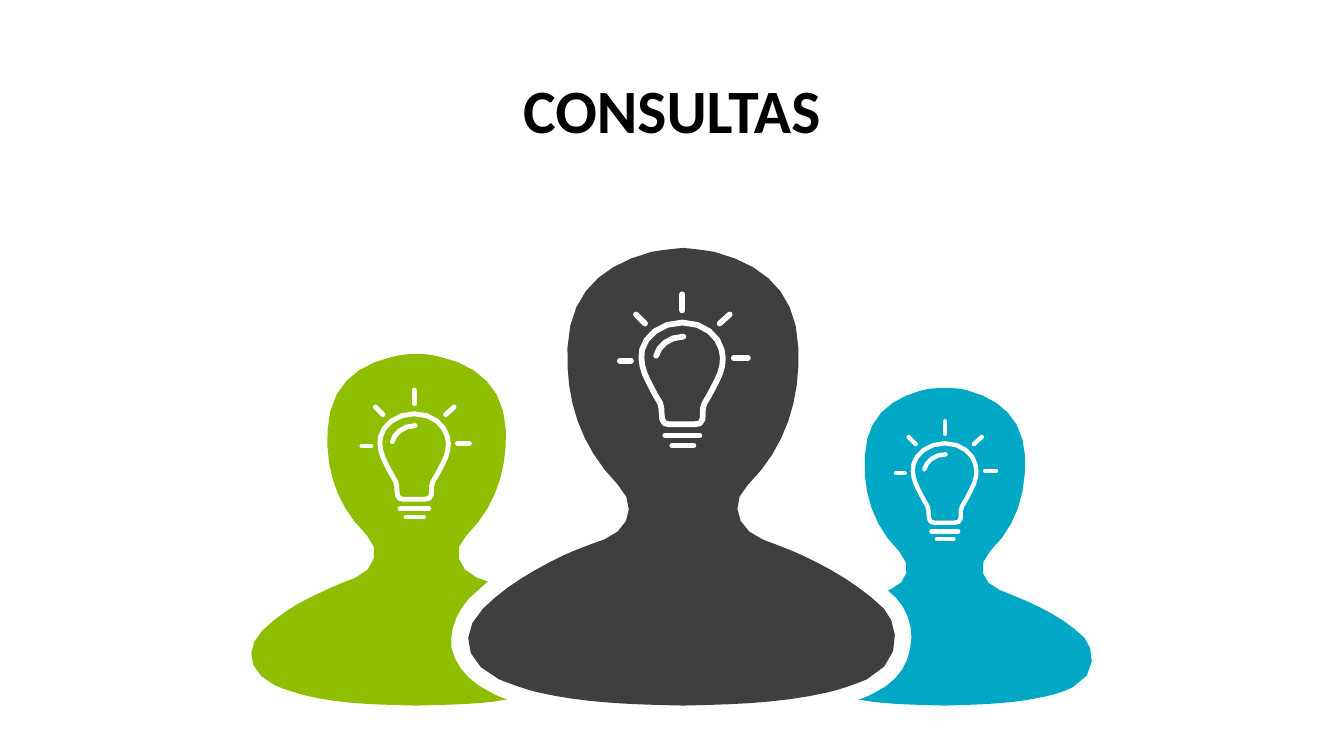
import math

from lxml import etree
from pptx import Presentation
from pptx import util as u
from pptx.dml.color import RGBColor
from pptx.enum import text
from pptx.oxml.ns import qn

COLORS = {"black": "000000", "white": "FFFFFF", "green": "8FBE00",
          "gray": "3F3F3F", "blue": "00A8C6"}
TITLE = "CONSULTAS"
GRID = 0.72        # points per drawing unit
FINE = 100         # freeform steps per point

# Outlines: a start point, then two handles and an end point per curve
GREEN_PERSON = [
    (448, 643), (446, 626), (452, 608), (466, 593),
    (472, 588), (478, 582), (484, 577), (481, 576), (477, 574), (473, 573),
    (454, 565), (448, 545), (463, 531), (492, 502), (503, 466), (502, 427),
    (500, 385), (475, 363), (437, 354), (429, 352), (421, 351), (413, 351),
    (406, 351), (397, 352), (389, 354), (351, 363), (327, 385), (325, 427),
    (323, 466), (334, 502), (364, 531), (378, 545), (372, 565), (353, 573),
    (343, 577), (332, 581), (322, 586), (299, 596), (278, 608), (260, 626),
    (244, 642), (244, 666), (273, 680), (282, 684), (293, 687), (303, 690),
    (336, 698), (370, 699), (413, 700), (447, 699), (476, 699), (503, 694),
    (498, 692), (492, 690), (487, 687), (466, 677), (452, 661), (448, 643)]
GRAY_PERSON = [
    (860, 674), (848, 679), (834, 684), (821, 687),
    (777, 697), (733, 699), (678, 700), (622, 699), (578, 697), (534, 687),
    (521, 684), (508, 679), (495, 674), (458, 656), (457, 626), (479, 604),
    (502, 581), (530, 565), (559, 551), (572, 545), (586, 540), (600, 535),
    (625, 525), (632, 500), (613, 481), (575, 442), (561, 396), (563, 345),
    (565, 291), (597, 263), (646, 250), (657, 248), (667, 247), (678, 246),
    (688, 247), (698, 248), (709, 250), (759, 263), (790, 291), (792, 345),
    (794, 396), (780, 443), (742, 481), (723, 499), (731, 525), (756, 535),
    (769, 540), (783, 545), (796, 551), (826, 565), (853, 581), (877, 604),
    (891, 619), (897, 656), (860, 674)]
BLUE_PERSON = [
    (1076, 633), (1060, 617), (1040, 606), (1020, 597),
    (1011, 593), (1001, 589), (991, 585), (974, 578), (969, 561), (982, 547),
    (1009, 521), (1018, 489), (1017, 453), (1015, 416), (993, 396), (959, 387),
    (952, 385), (944, 385), (937, 385), (930, 385), (923, 385), (915, 387),
    (881, 396), (859, 416), (858, 453), (856, 489), (866, 521), (892, 547),
    (905, 561), (901, 578), (883, 585), (882, 586), (882, 586), (881, 586),
    (884, 588), (886, 591), (889, 593), (901, 606), (907, 625), (903, 643),
    (900, 663), (887, 678), (868, 687), (863, 690), (858, 692), (852, 694),
    (878, 699), (905, 699), (937, 700), (976, 699), (1006, 698), (1037, 691),
    (1046, 689), (1056, 686), (1064, 682), (1090, 669), (1085, 643), (1076, 633)]

# Light bulb, measured from its own top left corner
GLASS = [
    (49, 129), (45, 129), (43, 128), (42, 124), (41, 119), (42, 113), (40, 108),
    (35, 100), (32, 94), (28, 86), (23, 77), (20, 66), (22, 55),
    (25, 42), (40, 28), (62, 28), (84, 28), (98, 42), (101, 55),
    (104, 66), (101, 77), (96, 86), (92, 94), (89, 100), (84, 108),
    (81, 113), (83, 119), (82, 124), (81, 128), (79, 129), (74, 129)]
GLINT = [(63, 42), (48, 42), (38, 52), (36, 61)]
RAYS = [[(62, 0), (62, 16)], [(16, 20), (25, 29)], [(109, 20), (99, 29)],
        [(0, 66), (11, 66)], [(113, 63), (127, 63)]]
SOCKET = [[(45, 140), (79, 140)], [(52, 150), (73, 150)]]
BULB = [(GLASS, True)] + [(part, False) for part in [GLINT, *RAYS, *SOCKET]]

# Person outline, colour, bulb corner, bulb scale, bulb line width in points
PEOPLE = [(GREEN_PERSON, "green", (359, 387), 0.84, 3.5),
          (GRAY_PERSON, "gray", (615, 292), 1, 4.12),
          (BLUE_PERSON, "blue", (889, 418), 0.78, 3.12)]


def flatten(points):
    """Turn a chain of cubic curves into straight steps, more for longer curves."""
    if len(points) == 2:
        return points
    steps = [points[0]]
    for i in range(0, len(points) - 1, 3):
        curve = points[i:i + 4]
        count = max(1, round(math.sqrt(math.dist(curve[0], curve[3])) / 1.6))
        for k in range(1, count + 1):
            t = k / count
            weights = ((1 - t) ** 3, 3 * t * (1 - t) ** 2, 3 * t * t * (1 - t), t ** 3)
            steps.append(tuple(sum(w * p[axis] for w, p in zip(weights, curve))
                               for axis in (0, 1)))
    return steps


def draw(contours, corner=(0, 0), scale=1):
    builder = None
    for points, closed in contours:
        start, *rest = [tuple((c + p * scale) * GRID * FINE for c, p in zip(corner, point))
                        for point in flatten(points)]
        if builder is None:
            builder = slide.shapes.build_freeform(*start, scale=u.Pt(1) / FINE)
        else:
            builder.move_to(*start)
        builder.add_line_segments(rest, close=closed)
    outline = builder.convert_to_shape()
    outline.shadow.inherit = False
    return outline


def rgb(name):
    return RGBColor.from_string(COLORS[name])


deck = Presentation()
deck.slide_width, deck.slide_height = u.Pt(960), u.Pt(540)
slide = deck.slides.add_slide(deck.slide_layouts[6])

# Title
title = slide.shapes.add_textbox(u.Pt(66), u.Pt(28.8), u.Pt(828), u.Pt(104.4))
title.text_frame.word_wrap = True
title.text_frame.vertical_anchor = text.MSO_ANCHOR.MIDDLE
title.text_frame.text = TITLE
heading = title.text_frame.paragraphs[0]
heading.alignment = text.PP_ALIGN.CENTER
heading.line_spacing = 0.9
font = heading.runs[0].font
font.name, font.size, font.bold = "Calibri", u.Pt(44), True
font.color.rgb = rgb("black")

# People
for silhouette, color, *_ in PEOPLE:
    person = draw([(silhouette, True)])
    person.fill.solid()
    person.fill.fore_color.rgb = rgb(color)
    person.line.fill.background()

# Light bulbs with rounded strokes
for _, _, corner, scale, width in PEOPLE:
    bulb = draw(BULB, corner, scale)
    bulb.fill.background()
    bulb.line.color.rgb = rgb("white")
    bulb.line.width = u.Pt(width)
    stroke = bulb.line.fill._xPr
    stroke.set("cap", "rnd")
    etree.SubElement(stroke, qn("a:round"))

deck.save("out.pptx")
